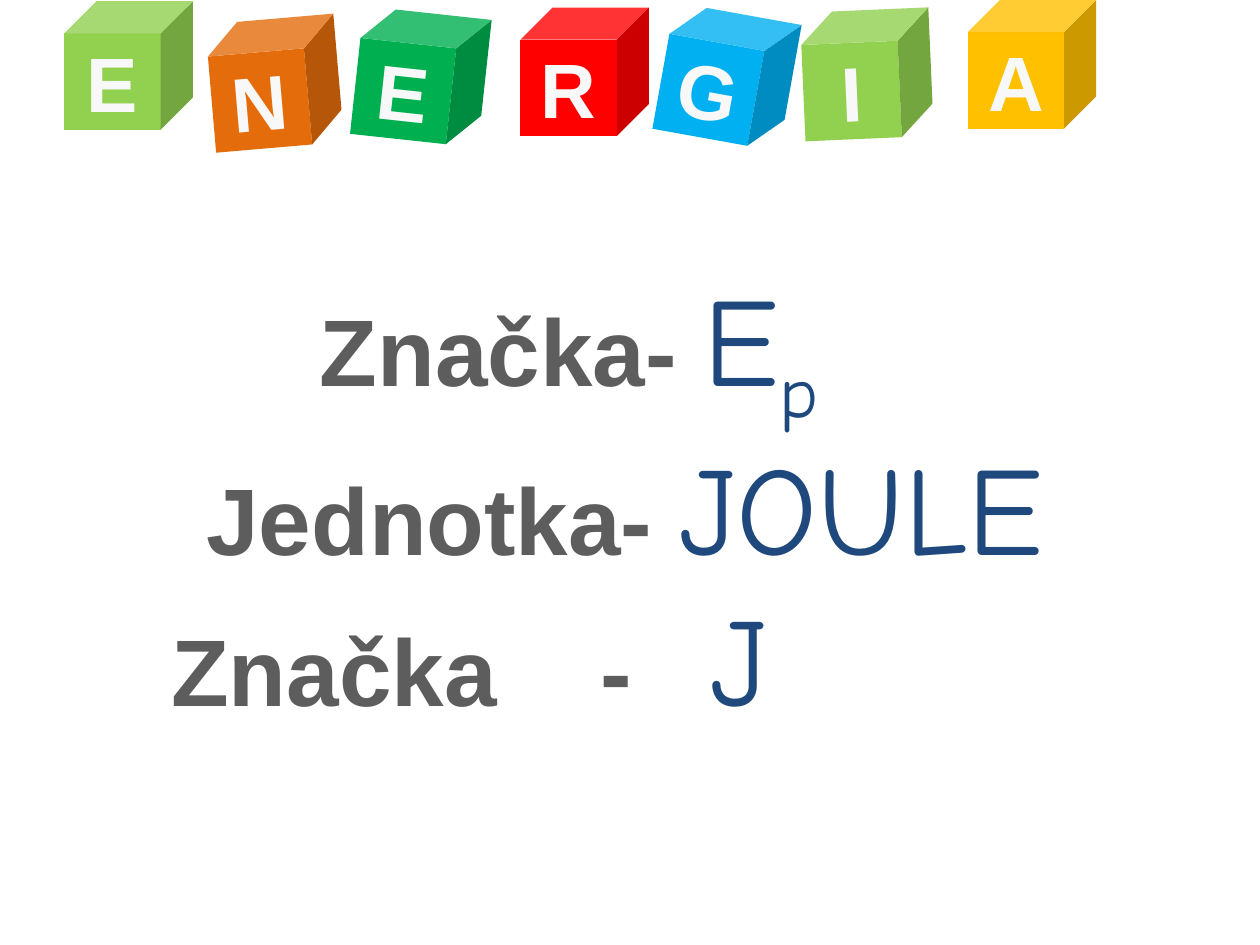
from dataclasses import dataclass
from lxml.etree import SubElement
from pptx import Presentation
from pptx.dml.color import RGBColor
from pptx.enum.shapes import MSO_SHAPE as Shape
from pptx.enum.text import MSO_ANCHOR as Anchor, MSO_AUTO_SIZE as AutoSize, PP_ALIGN as Align
from pptx.oxml.ns import qn
from pptx.util import Inches, Pt

COLORS = {
    "lime": "92D050", "orange": "E46C0A", "green": "00B050", "red": "FF0000",
    "sky": "00B0F0", "amber": "FFC000", "letter": "F8F8F8",
    "label": "5D5D5D", "answer": "1F497D",
}
FORMATS = {
    "letter": dict(name="Arial", size=Pt(44), bold=True),
    "label": dict(name="Arial", size=Pt(54), bold=True),
    "answer": dict(name="Comic Neue", size=Pt(72), bold=False),
}
CUBE_SIZE = 1.02


@dataclass
class Cube:
    letter: str
    color: str
    left: float
    top: float
    turn: float = 0


@dataclass
class Span:
    text: str
    style: str
    baseline: int = 0


@dataclass
class Line:
    spans: list[Span]
    align: Align = Align.CENTER
    tabs: tuple[float, ...] = ()


CUBES = [
    Cube("E", "lime", 0.51, 0.01),
    Cube("N", "orange", 1.67, 0.15, 355.1),
    Cube("E", "green", 2.83, 0.1, 6.2),
    Cube("R", "red", 4.13, 0.06),
    Cube("I", "lime", 6.37, 0.08, 357.5),
    Cube("G", "sky", 5.26, 0.1, 10.2),
    Cube("A", "amber", 7.68, 0),
]
SYMBOL = [Line([Span("Značka- ", "label"), Span("E", "answer"), Span("p", "answer", -25000)])]
UNIT = [
    Line([Span("Jednotka- ", "label"), Span("JOULE", "answer")]),
    Line([Span("Značka\t-\t", "label"), Span("J", "answer")], Align.LEFT, (3.41, 4.28)),
]


def add_span(para, span: Span):
    run = para.add_run()
    run.text = span.text
    for key, value in FORMATS[span.style].items():
        setattr(run.font, key, value)
    run.font.color.rgb = RGBColor.from_string(COLORS[span.style])
    if span.baseline:
        run.font._element.set("baseline", str(span.baseline))
    return run


def add_cube(page, cube: Cube) -> None:
    shape = page.shapes.add_shape(
        Shape.CUBE, *map(Inches, (cube.left, cube.top, CUBE_SIZE, CUBE_SIZE)))
    shape.shadow.inherit = False
    shape.rotation = cube.turn
    shape.fill.solid()
    shape.fill.fore_color.rgb = RGBColor.from_string(COLORS[cube.color])
    shape.line.fill.background()
    properties = shape._element.spPr
    scene = SubElement(properties, qn("a:scene3d"))
    SubElement(scene, qn("a:camera"), prst="orthographicFront")
    SubElement(scene, qn("a:lightRig"), rig="threePt", dir="t")
    SubElement(properties, qn("a:sp3d"), extrusionH="76200")
    frame = shape.text_frame
    frame.vertical_anchor = Anchor.MIDDLE
    para = frame.paragraphs[0]
    para.alignment = Align.CENTER
    run = add_span(para, Span(cube.letter, "letter"))
    run.font._element.set("spc", "150")


def add_lines(page, lines: list[Line], left: float, top: float,
              width: float, height: float, inset: float = 0.1) -> None:
    box = page.shapes.add_textbox(*map(Inches, (left, top, width, height)))
    frame = box.text_frame
    frame.word_wrap = False
    frame.auto_size = AutoSize.SHAPE_TO_FIT_TEXT
    frame.margin_left = Inches(inset)
    for index, line in enumerate(lines):
        para = frame.add_paragraph() if index else frame.paragraphs[0]
        para.alignment = line.align
        if line.tabs:
            stops = SubElement(para._p.get_or_add_pPr(), qn("a:tabLst"))
            for stop in line.tabs:
                SubElement(stops, qn("a:tab"), pos=str(Inches(stop)), algn="l")
        for span in line.spans:
            add_span(para, span)


def main() -> None:
    deck = Presentation()
    deck.slide_width, deck.slide_height = Inches(10), Inches(7.5)
    page = deck.slides.add_slide(deck.slide_layouts[6])
    for cube in CUBES:
        add_cube(page, cube)
    add_lines(page, SYMBOL, 2.38, 2.02, 4.27, 1.31)
    add_lines(page, UNIT, 1.05, 3.36, 7.61, 2.52, inset=0.31)
    deck.save("out.pptx")


if __name__ == "__main__":
    main()
